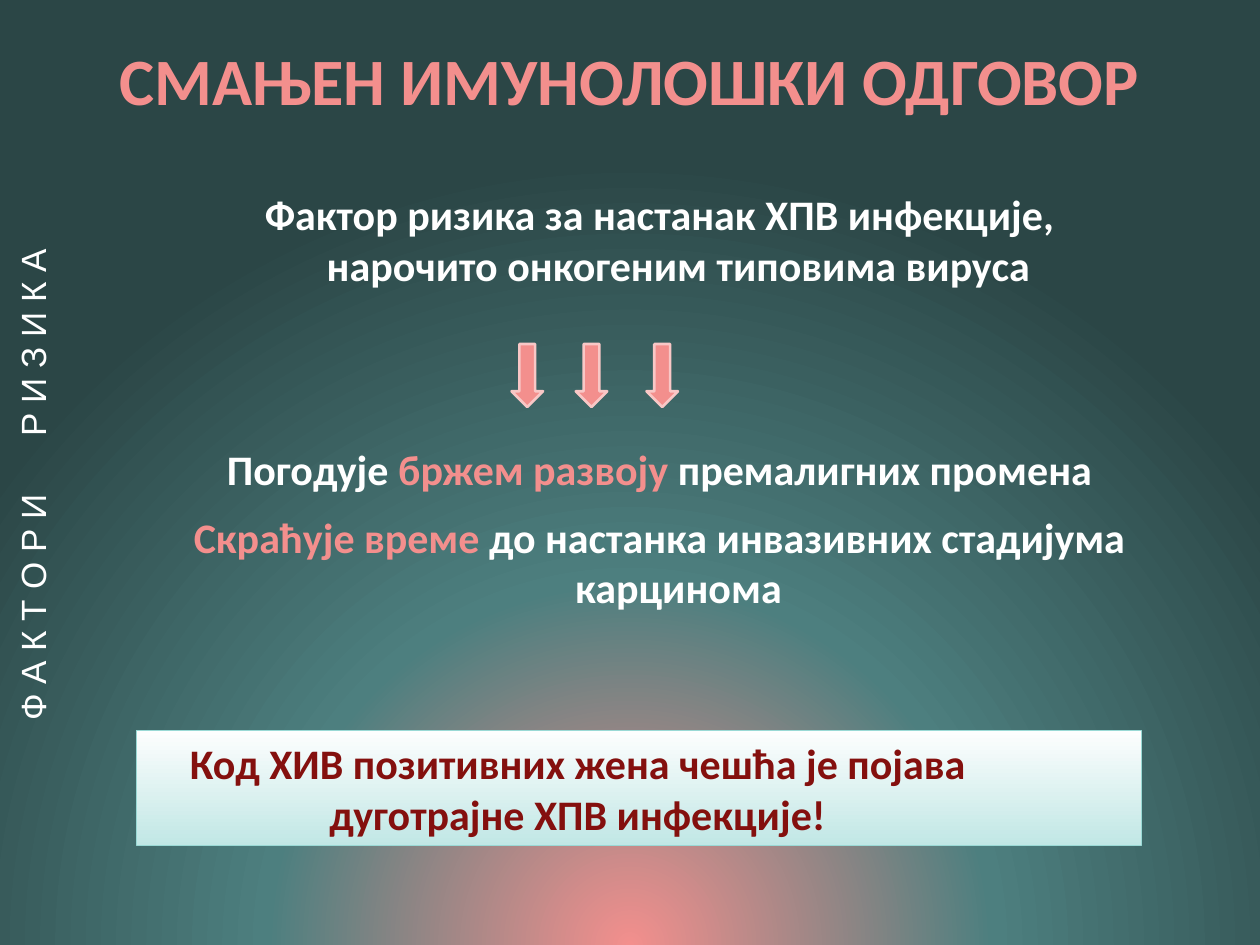
from dataclasses import dataclass

from lxml import etree
from pptx import Presentation
from pptx.dml.color import RGBColor
from pptx.enum.shapes import MSO_SHAPE
from pptx.enum.text import MSO_ANCHOR, MSO_AUTO_SIZE, PP_ALIGN
from pptx.oxml.ns import qn
from pptx.util import Pt

LEFT, CENTER = PP_ALIGN.LEFT, PP_ALIGN.CENTER
TOP, MIDDLE = MSO_ANCHOR.TOP, MSO_ANCHOR.MIDDLE
DOWN_ARROW, RECTANGLE = MSO_SHAPE.DOWN_ARROW, MSO_SHAPE.RECTANGLE
NO_AUTOFIT = MSO_AUTO_SIZE.NONE

COLORS = {
    "coral": "F38F8D",
    "coral_edge": "F9C7C6",
    "teal": "4D7F7F",
    "dark_teal": "2B4646",
    "white": "FFFFFF",
    "note_top": "FDFEFE",
    "note_bottom": "C1E7E5",
    "note_edge": "9AD9D5",
    "dark_red": "84100E",
}
BACKGROUND_STOPS = [(0, "coral"), (46, "teal"), (100, "dark_teal")]


@dataclass
class Span:
    text: str
    color: str = "white"
    tracking: float = 0


@dataclass
class BodyLine:
    spans: list[Span]
    space_before: float = 0


BODY_LINES = [
    BodyLine([Span("Фактор ризика за настанак ХПВ инфекције, "
                   "нарочито онкогеним типовима вируса")]),
    BodyLine([Span("Погодује "), Span("бржем развоју ", "coral"),
              Span("премалигних промена")], space_before=88),
    BodyLine([Span("Скраћује време ", "coral"),
              Span("до настанка инвазивних стадијума карцинома")], space_before=10),
]
ARROW_LEFTS = [292.3, 329, 369.4]


def rgb(name: str) -> RGBColor:
    return RGBColor.from_string(COLORS[name])


def place(shape, left: float, top: float, width: float, height: float) -> None:
    shape.left, shape.top = Pt(left), Pt(top)
    shape.width, shape.height = Pt(width), Pt(height)


def setup_frame(frame, anchor=TOP) -> None:
    frame.word_wrap = True
    frame.auto_size = NO_AUTOFIT
    frame.vertical_anchor = anchor


def write(para, spans: list[Span], *, size: float = 24, font: str = "Calibri",
          bold: bool = True, align=CENTER, space_before: float = 0) -> None:
    para.alignment = align
    para.space_before = Pt(space_before)
    for item in spans:
        span = para.add_run()
        span.text = item.text
        span.font.size = Pt(size)
        span.font.name = font
        span.font.bold = bold
        span.font.color.rgb = rgb(item.color)
        if item.tracking:
            span.font._element.set("spc", str(round(item.tracking * 100)))


def paint_background(page) -> None:
    """Radial gradient centred below the bottom edge of the page."""
    page.background.fill.gradient()
    gradient = page._element.find(".//" + qn("a:gradFill"))
    for child in list(gradient):
        gradient.remove(child)
    stops = etree.SubElement(gradient, qn("a:gsLst"))
    for position, name in BACKGROUND_STOPS:
        stop = etree.SubElement(stops, qn("a:gs"), pos=str(position * 1000))
        etree.SubElement(stop, qn("a:srgbClr"), val=COLORS[name])
    circle = etree.SubElement(gradient, qn("a:path"), path="circle")
    etree.SubElement(circle, qn("a:fillToRect"),
                     l="50000", t="130000", r="50000", b="-30000")


def add_title(page) -> None:
    title = page.shapes.title
    place(title, 52.6, 18, 660.2, 54)
    setup_frame(title.text_frame, MIDDLE)
    title.text_frame.margin_left = Pt(15.5)
    write(title.text_frame.paragraphs[0],
          [Span("СМАЊЕН ИМУНОЛОШКИ ОДГОВОР", "coral")], size=37.8, align=LEFT)


def add_body(page) -> None:
    body = page.placeholders[1]
    place(body, 100.8, 69.8, 552.2, 324)
    frame = body.text_frame
    setup_frame(frame)
    frame.margin_top = Pt(38)
    for index, line in enumerate(BODY_LINES):
        para = frame.add_paragraph() if index else frame.paragraphs[0]
        properties = para._p.get_or_add_pPr()
        properties.set("marL", str(Pt(21.6)))
        properties.set("indent", str(Pt(-21.6)))
        etree.SubElement(properties, qn("a:buNone"))
        write(para, line.spans, space_before=line.space_before)


def add_arrow(page, left: float) -> None:
    arrow = page.shapes.add_shape(DOWN_ARROW, Pt(left), Pt(196.6), Pt(18), Pt(36))
    arrow.shadow.inherit = False
    arrow.fill.solid()
    arrow.fill.fore_color.rgb = rgb("coral")
    arrow.line.color.rgb = rgb("coral_edge")
    arrow.line.width = Pt(1.5)


def add_note(page) -> None:
    note = page.shapes.add_shape(RECTANGLE, Pt(77.8), Pt(417.6), Pt(574.6), Pt(65.5))
    note.shadow.inherit = False
    note.fill.gradient()
    note.fill.gradient_angle = 270
    for stop, name in zip(note.fill.gradient_stops, ("note_top", "note_bottom")):
        stop.color.rgb = rgb(name)
        stop.position = 0 if name == "note_top" else 1
    note.line.color.rgb = rgb("note_edge")
    note.line.width = Pt(0.75)
    frame = note.text_frame
    setup_frame(frame, MIDDLE)
    first = frame.paragraphs[0]
    first._p.get_or_add_pPr().set("marR", str(Pt(70)))
    write(first, [Span("Код ХИВ позитивних жена чешћа је појава", "dark_red")])
    write(frame.add_paragraph(), [Span("дуготрајне ХПВ инфекције!", "dark_red")])


def add_side_label(page) -> None:
    label = page.shapes.add_textbox(Pt(2.9), Pt(102.2), Pt(38.9), Pt(316.8))
    setup_frame(label.text_frame)
    label.text_frame._txBody.bodyPr.set("vert", "vert270")
    write(label.text_frame.paragraphs[0],
          [Span("Ф А К Т О Р И"), Span(" ", tracking=27.8), Span("Р И З И К А")],
          size=20, font="Arial", bold=False, align=LEFT)


def main() -> None:
    deck = Presentation()
    deck.slide_width, deck.slide_height = Pt(720), Pt(540)
    page = deck.slides.add_slide(deck.slide_layouts[1])
    paint_background(page)
    add_title(page)
    add_body(page)
    for left in ARROW_LEFTS:
        add_arrow(page, left)
    add_note(page)
    add_side_label(page)
    deck.save("out.pptx")


if __name__ == "__main__":
    main()
